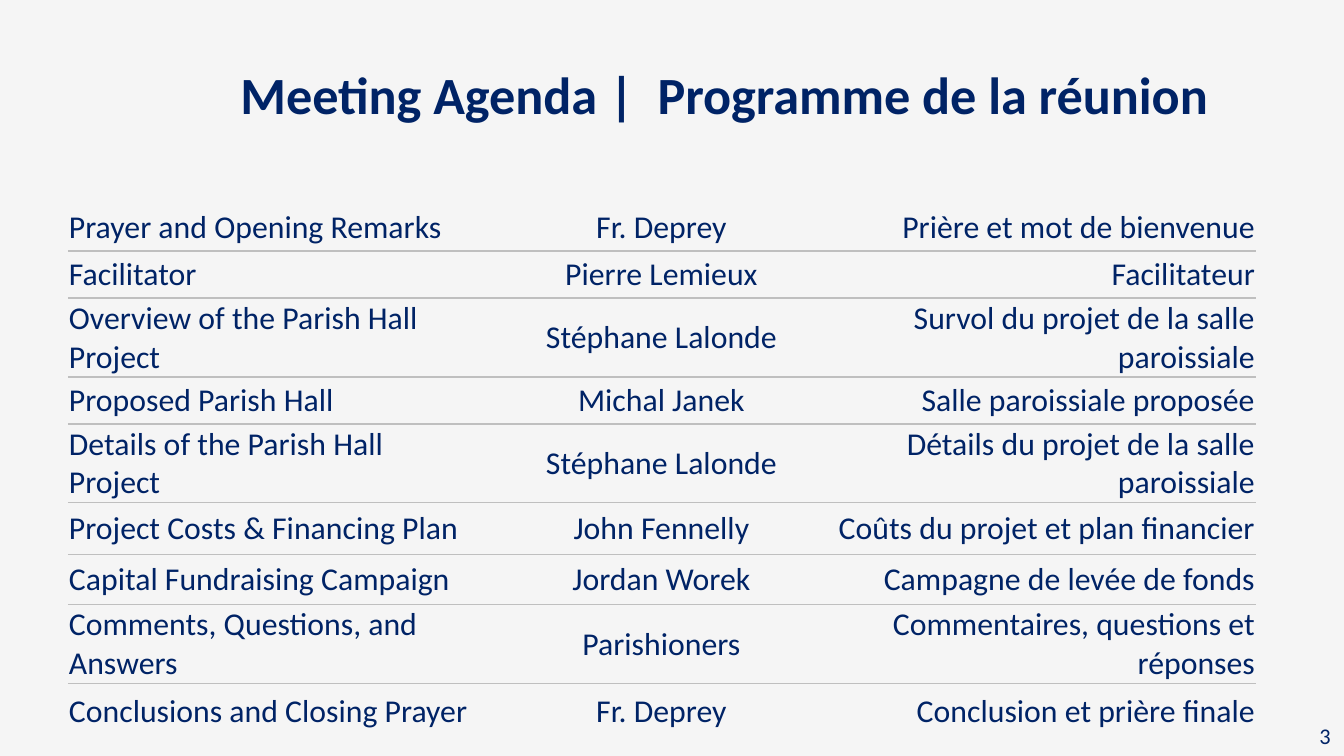
from pptx import Presentation
from pptx.dml.color import RGBColor
from pptx.enum.text import MSO_ANCHOR, MSO_AUTO_SIZE, PP_ALIGN
from pptx.oxml import parse_xml
from pptx.oxml.ns import nsdecls
from pptx.util import Pt

COLORS = {"background": "F5F5F5", "navy": "002366", "rule": "BFBFBF"}
FONT = "Calibri"
TITLE = "Meeting Agenda |  Programme de la réunion"
PAGE_NUMBER = "3"
AGENDA = [
    (48, "Prayer and Opening Remarks", "Fr. Deprey", "Prière et mot de bienvenue"),
    (47, "Facilitator", "Pierre Lemieux", "Facilitateur"),
    (79, "Overview of the Parish Hall \vProject", "Stéphane Lalonde",
     "Survol du projet de la salle paroissiale"),
    (47, "Proposed Parish Hall", "Michal Janek", "Salle paroissiale proposée"),
    (78, "Details of the Parish Hall \vProject", "Stéphane Lalonde",
     "Détails du projet de la salle paroissiale"),
    (52, "Project Costs & Financing Plan", "John Fennelly",
     "Coûts du projet et plan financier"),
    (50, "Capital Fundraising Campaign", "Jordan Worek", "Campagne de levée de fonds"),
    (79, "Comments, Questions, and \vAnswers", "Parishioners",
     "Commentaires, questions et réponses"),
    (56, "Conclusions and Closing Prayer", "Fr. Deprey", "Conclusion et prière finale"),
]
COLUMNS = [(472, PP_ALIGN.LEFT), (243, PP_ALIGN.CENTER), (473, PP_ALIGN.RIGHT)]


def px(n):
    return round(n * 914400 / 134.4)


def rgb(name):
    return RGBColor.from_string(COLORS[name])


def write(tf, text, size, align, bold=False):
    tf.text = text
    p = tf.paragraphs[0]
    p.alignment = align
    for r in p.runs:
        r.font.name = FONT
        r.font.size = Pt(size)
        r.font.bold = bold
        r.font.color.rgb = rgb("navy")
    return p


def set_borders(cell, ruled):
    tcPr = cell._tc.get_or_add_tcPr()
    for i, side in enumerate(("lnL", "lnR", "lnT", "lnB")):
        paint = "<a:noFill/>"
        if side in ruled:
            paint = f'<a:solidFill><a:srgbClr val="{COLORS["rule"]}"/></a:solidFill>'
        tcPr.insert(i, parse_xml(
            f'<a:{side} {nsdecls("a")} w="{Pt(1)}">{paint}</a:{side}>'))


def add_agenda(s):
    height = sum(row[0] for row in AGENDA)
    width = sum(w for w, _ in COLUMNS)
    table = s.shapes.add_table(len(AGENDA), len(COLUMNS),
                               px(68), px(203), px(width), px(height)).table
    table.first_row = table.horz_banding = False
    for column, (w, _) in zip(table.columns, COLUMNS):
        column.width = px(w)
    for i, (h, *texts) in enumerate(AGENDA):
        table.rows[i].height = px(h)
        ruled = {"lnT"} if i > 0 else set()
        if i < len(AGENDA) - 1:
            ruled.add("lnB")
        for j, (text, (_, align)) in enumerate(zip(texts, COLUMNS)):
            cell = table.cell(i, j)
            cell.margin_left = cell.margin_right = cell.margin_top = px(1)
            cell.margin_bottom = 0
            cell.vertical_anchor = MSO_ANCHOR.MIDDLE
            cell.fill.background()
            set_borders(cell, ruled)
            write(cell.text_frame, text, 17, align).space_after = Pt(12)


def main():
    prs = Presentation()
    prs.slide_width, prs.slide_height = px(1344), px(756)
    s = prs.slides.add_slide(prs.slide_layouts[5])
    s.background.fill.solid()
    s.background.fill.fore_color.rgb = rgb("background")

    title = s.shapes.title
    title.left, title.top, title.width, title.height = map(px, (171, 31, 1106, 126))
    write(title.text_frame, TITLE, 28, PP_ALIGN.CENTER, bold=True)

    add_agenda(s)

    number = s.shapes.add_textbox(px(1031), px(716), px(313), px(40))
    write(number.text_frame, PAGE_NUMBER, 12, PP_ALIGN.RIGHT)

    for sp in (title, number):
        tf = sp.text_frame
        tf.word_wrap = True
        tf.auto_size = MSO_AUTO_SIZE.NONE
        tf.vertical_anchor = MSO_ANCHOR.MIDDLE

    prs.save("out.pptx")


if __name__ == "__main__":
    main()
